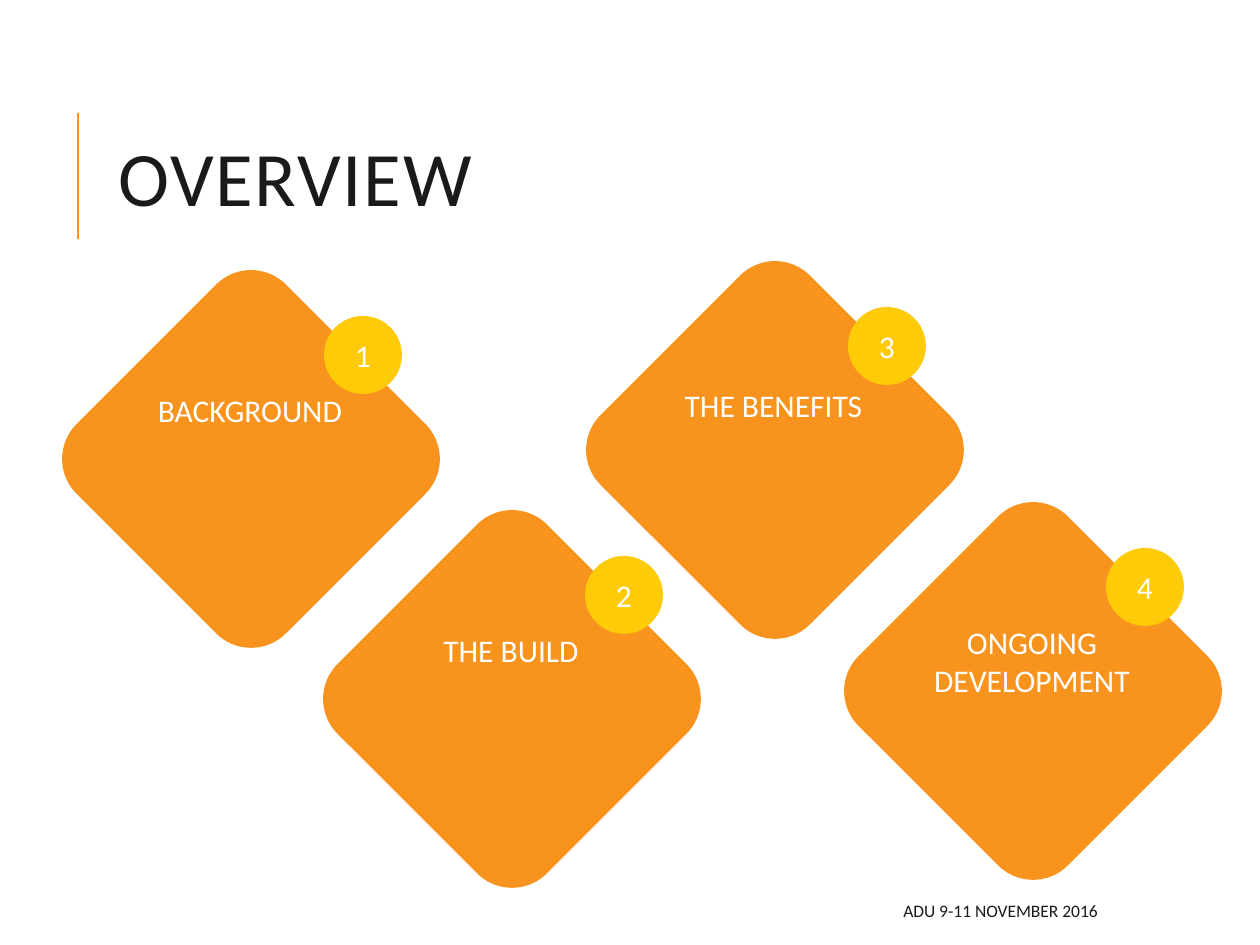
import pptx
import pptx.util
from pptx.dml.color import RGBColor
from pptx.enum.shapes import MSO_CONNECTOR, MSO_SHAPE
from pptx.enum.text import MSO_ANCHOR, PP_ALIGN
from pptx.oxml.ns import qn
from lxml import etree

PX = 914400 // 126
FONT = "Calibri"
COLORS = {"orange": "F8931D", "yellow": "FFCA08", "dark": "1A1A1A", "white": "FFFFFF"}

TITLE = "OVERVIEW"
FOOTER = "ADU 9-11 NOVEMBER 2016"
# topic, diamond left and top, label width, height and drop below the diamond's top
TOPICS = [
    ("BACKGROUND", 103, 311, 284, 50, 74),
    ("THE BUILD", 364, 551, 284, 50, 74),
    ("THE BENEFITS", 627, 302, 353, 50, 78),
    ("ONGOING DEVELOPMENT", 885, 543, 284, 89, 74),
]
DIAMOND, BADGE = 296, 78
BADGE_RIGHT, BADGE_DOWN = 221, 5


def color(name):
    return RGBColor.from_string(COLORS[name])


def box(*lengths):
    return [length * PX for length in lengths]


def set_text(shape, text, size, color_name, align, anchor):
    frame = shape.text_frame
    frame.word_wrap = True
    frame.vertical_anchor = anchor
    frame.text = text
    paragraph = frame.paragraphs[0]
    paragraph.alignment = align
    font = paragraph.runs[0].font
    font.name = FONT
    font.size = pptx.util.Pt(size)
    font.color.rgb = color(color_name)
    return paragraph


def add_text(slide, place, *style):
    return set_text(slide.shapes.add_textbox(*box(*place)), *style)


def add_filled(slide, kind, place, color_name):
    shape = slide.shapes.add_shape(kind, *box(*place))
    shape.shadow.inherit = False
    shape.fill.solid()
    shape.fill.fore_color.rgb = color(color_name)
    shape.line.fill.background()
    return shape


def add_header(slide):
    rule = slide.shapes.add_connector(MSO_CONNECTOR.STRAIGHT, *box(78, 239, 78, 113))
    rule.line.color.rgb = color("orange")
    rule.line.width = pptx.util.Pt(1.5)
    etree.SubElement(rule._element.spPr, qn("a:effectLst"))
    paragraph = add_text(slide, (106, 81, 1004, 207), TITLE, 44, "dark",
                         PP_ALIGN.LEFT, MSO_ANCHOR.MIDDLE)
    paragraph.line_spacing = 0.8
    paragraph.runs[0].font._element.set("spc", "100")


def add_topic(slide, number, topic, left, top, width, height, drop):
    diamond = add_filled(slide, MSO_SHAPE.ROUNDED_RECTANGLE,
                         (left, top, DIAMOND, DIAMOND), "orange")
    diamond.rotation = 45
    badge = add_filled(slide, MSO_SHAPE.OVAL,
                       (left + BADGE_RIGHT, top + BADGE_DOWN, BADGE, BADGE), "yellow")
    set_text(badge, str(number), 18, "white", PP_ALIGN.CENTER, MSO_ANCHOR.MIDDLE)
    label_left = left + (DIAMOND - width) // 2 - 1
    add_text(slide, (label_left, top + drop, width, height), topic, 18, "white",
             PP_ALIGN.CENTER, MSO_ANCHOR.TOP)


def main():
    presentation = pptx.Presentation()
    presentation.slide_width, presentation.slide_height = box(1260, 945)
    slide = presentation.slides.add_slide(presentation.slide_layouts[6])
    add_header(slide)
    for number, topic in enumerate(TOPICS, start=1):
        add_topic(slide, number, *topic)
    add_text(slide, (500, 892, 610, 38), FOOTER, 10, "dark",
             PP_ALIGN.RIGHT, MSO_ANCHOR.MIDDLE)
    presentation.save("out.pptx")


if __name__ == "__main__":
    main()
